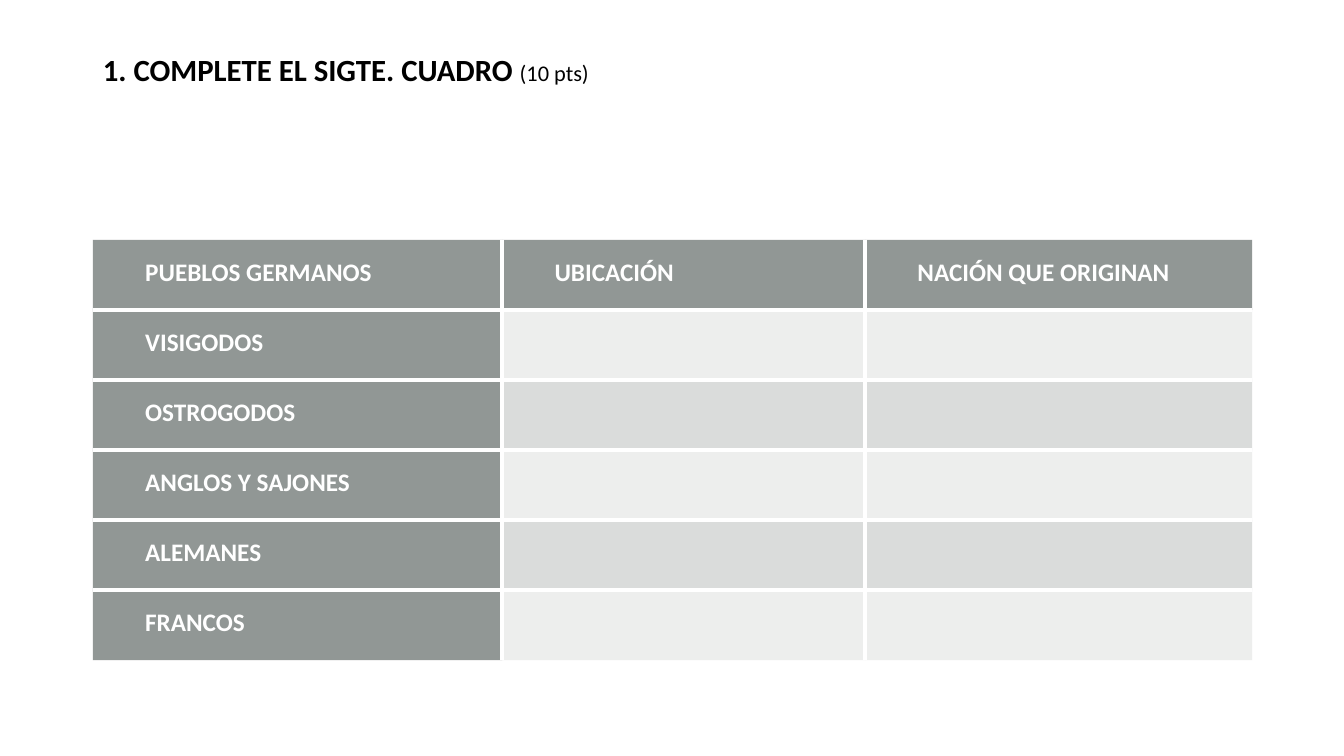
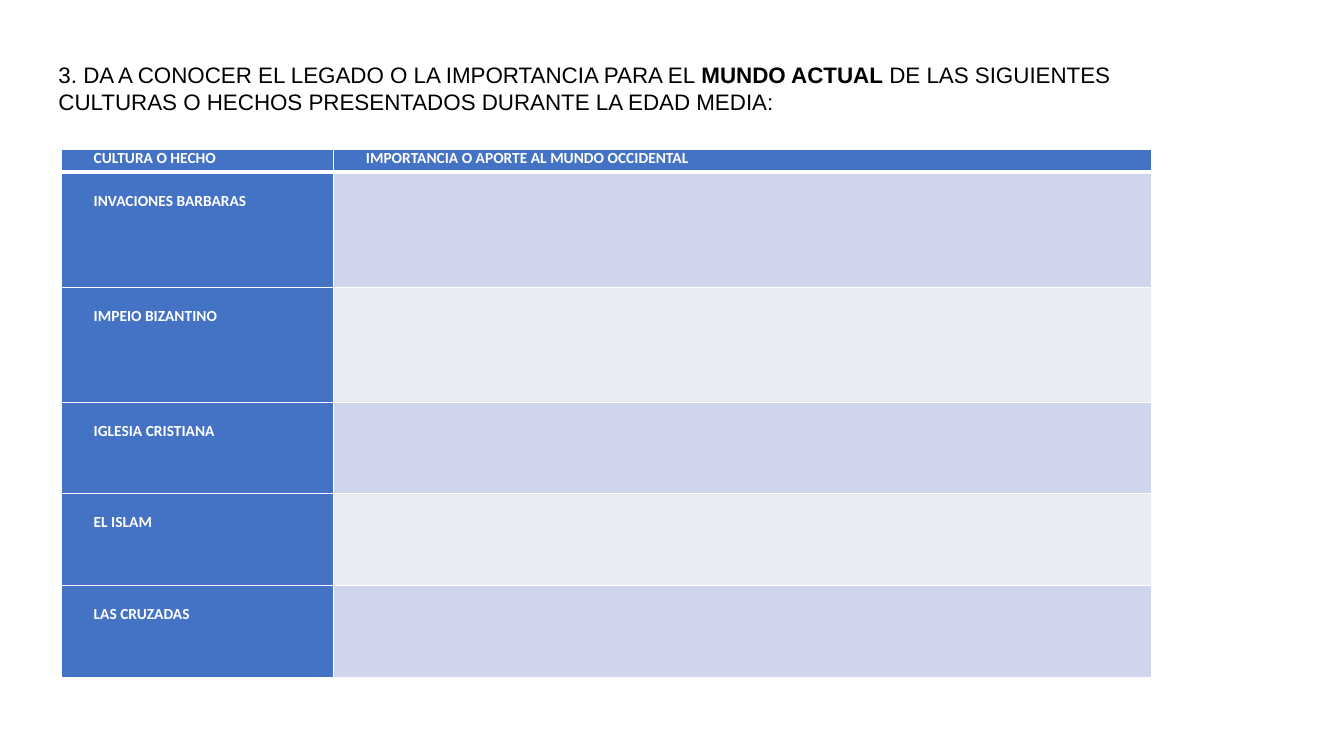
from collections import namedtuple

from lxml import etree
from pptx import Presentation
from pptx.dml.color import RGBColor
from pptx.enum import text
from pptx.oxml import ns
from pptx.util import Emu, Pt

PX = 9144
WHITE = RGBColor(0xFF, 0xFF, 0xFF)
BLACK = RGBColor(0x00, 0x00, 0x00)
SLATE = RGBColor(0x63, 0x6B, 0x68)
GREY = RGBColor(0x87, 0x8E, 0x8B)
BLUE = RGBColor(0x44, 0x72, 0xC4)
BLUE_BAND = RGBColor(0xCF, 0xD5, 0xEA)
BLUE_PALE = RGBColor(0xE9, 0xEB, 0xF5)

Box = namedtuple("Box", "left top width height")
Paint = namedtuple("Paint", "color opacity", defaults=[100])
Style = namedtuple(
    "Style", "size heading bands inset header_top label_top line header_line outer")

SLATE_STYLE = Style(
    size=18, heading=Paint(SLATE, 70), bands=(Paint(GREY, 15), Paint(GREY, 30)),
    inset=52, header_top=17, label_top=17, line=3, header_line=3, outer=False)
BLUE_STYLE = Style(
    size=11, heading=Paint(BLUE), bands=(Paint(BLUE_BAND), Paint(BLUE_PALE)),
    inset=32, header_top=0, label_top=19, line=1, header_line=3, outer=True)


def px(length):
    """Turn a length in px into EMU."""
    return Emu(length * PX)


def add_title(presentation, box, font_name, lines, anchor, bottom=5):
    """Add a slide whose title holds lines of (text, size, bold) runs."""
    slide = presentation.slides.add_slide(presentation.slide_layouts[5])
    title = slide.shapes.title
    title.left, title.top, title.width, title.height = map(px, box)
    frame = title.text_frame
    frame.word_wrap = True
    frame.auto_size = text.MSO_AUTO_SIZE.NONE
    frame.vertical_anchor = anchor
    frame.margin_left = frame.margin_right = px(10)
    frame.margin_top, frame.margin_bottom = px(5), px(bottom)
    for index, line in enumerate(lines):
        paragraph = frame.add_paragraph() if index else frame.paragraphs[0]
        paragraph.alignment = text.PP_ALIGN.LEFT
        paragraph.font.name = font_name
        paragraph.font.color.rgb = BLACK
        for content, size, bold in line:
            run = paragraph.add_run()
            run.text = content
            run.font.size = Pt(size)
            run.font.bold = bold
    return slide


def paint_cell(cell, paint):
    """Fill a cell with a colour at the given opacity."""
    cell.fill.solid()
    cell.fill.fore_color.rgb = paint.color
    if paint.opacity < 100:
        color = cell._tc.tcPr.find(".//" + ns.qn("a:srgbClr"))
        etree.SubElement(color, ns.qn("a:alpha"), val=str(paint.opacity * 1000))


def border_cell(cell, widths):
    """Draw white left, right, top and bottom borders; zero means none."""
    for index, (side, width) in enumerate(zip("LRTB", widths)):
        line = etree.Element(ns.qn(f"a:ln{side}"), w=str(Pt(width)))
        if width:
            fill = etree.SubElement(line, ns.qn("a:solidFill"))
            etree.SubElement(fill, ns.qn("a:srgbClr"), val=str(WHITE))
        else:
            etree.SubElement(line, ns.qn("a:noFill"))
        cell._tc.tcPr.insert(index, line)


def write_cell(cell, content, style, top):
    """Write a bold white heading in a cell."""
    cell.margin_left, cell.margin_right = px(style.inset), px(7)
    cell.margin_top, cell.margin_bottom = px(top), px(0)
    paragraph = cell.text_frame.paragraphs[0]
    paragraph.text = content
    paragraph.alignment = text.PP_ALIGN.JUSTIFY
    paragraph.font.name = "Calibri"
    paragraph.font.size = Pt(style.size)
    paragraph.font.bold = True
    paragraph.font.color.rgb = WHITE


def add_worksheet(slide, box, columns, rows, headers, labels, style):
    """Add a table with headings on top and at left, and banded blank cells."""
    table = slide.shapes.add_table(len(rows), len(columns), *map(px, box)).table
    table.first_row = table.horz_banding = False
    for column, width in zip(table.columns, columns):
        column.width = px(width)
    for row, height in zip(table.rows, rows):
        row.height = px(height)
    last_row, last_column = len(rows) - 1, len(columns) - 1
    edge = style.line if style.outer else 0
    for r in range(len(rows)):
        top = (edge, style.header_line)[r] if r < 2 else style.line
        bottom = edge if r == last_row else style.line if r else style.header_line
        for c in range(len(columns)):
            cell = table.cell(r, c)
            heading = r == 0 or c == 0
            paint_cell(cell, style.heading if heading else style.bands[(r - 1) % 2])
            border_cell(cell, (style.line if c else edge,
                               edge if c == last_column else style.line, top, bottom))
            if r == 0:
                write_cell(cell, headers[c], style, style.header_top)
            elif c == 0:
                write_cell(cell, labels[r - 1], style, style.label_top)


def add_peoples_slide(presentation):
    """Build the exercise on the Germanic peoples."""
    slide = add_title(
        presentation, Box(92, 32, 1150, 102), "Calibri",
        [[("1. COMPLETE EL SIGTE. CUADRO ", 22, True), ("(10 pts)", 16, False)]],
        text.MSO_ANCHOR.BOTTOM, bottom=47)
    add_worksheet(
        slide, Box(92, 238, 1150, 417), [406, 360, 384], [69.5] * 6,
        ["PUEBLOS GERMANOS", "UBICACIÓN", "NACIÓN QUE ORIGINAN"],
        ["VISIGODOS", "OSTROGODOS", "ANGLOS Y SAJONES", "ALEMANES", "FRANCOS"],
        SLATE_STYLE)


def add_legacy_slide(presentation):
    """Build the exercise on the legacy of the Middle Ages."""
    slide = add_title(
        presentation, Box(48, 56, 1082, 92), "Arial",
        [[("3. DA A CONOCER EL LEGADO O LA IMPORTANCIA PARA EL ", 16, False),
          ("MUNDO ACTUAL", 16, True), (" DE LAS SIGUIENTES", 16, False)],
         [("CULTURAS O HECHOS PRESENTADOS DURANTE LA EDAD MEDIA:", 16, False)]],
        text.MSO_ANCHOR.TOP)
    add_worksheet(
        slide, Box(61, 148, 1081, 525), [270, 811], [23, 114, 114, 91, 91, 91],
        ["CULTURA O HECHO", "IMPORTANCIA O APORTE AL MUNDO OCCIDENTAL"],
        ["INVACIONES BARBARAS", "IMPEIO BIZANTINO", "IGLESIA CRISTIANA",
         "EL ISLAM", "LAS CRUZADAS"],
        BLUE_STYLE)


def main():
    """Build and save the presentation."""
    presentation = Presentation()
    presentation.slide_width, presentation.slide_height = px(1333), px(750)
    add_peoples_slide(presentation)
    add_legacy_slide(presentation)
    presentation.save("out.pptx")


if __name__ == "__main__":
    main()
